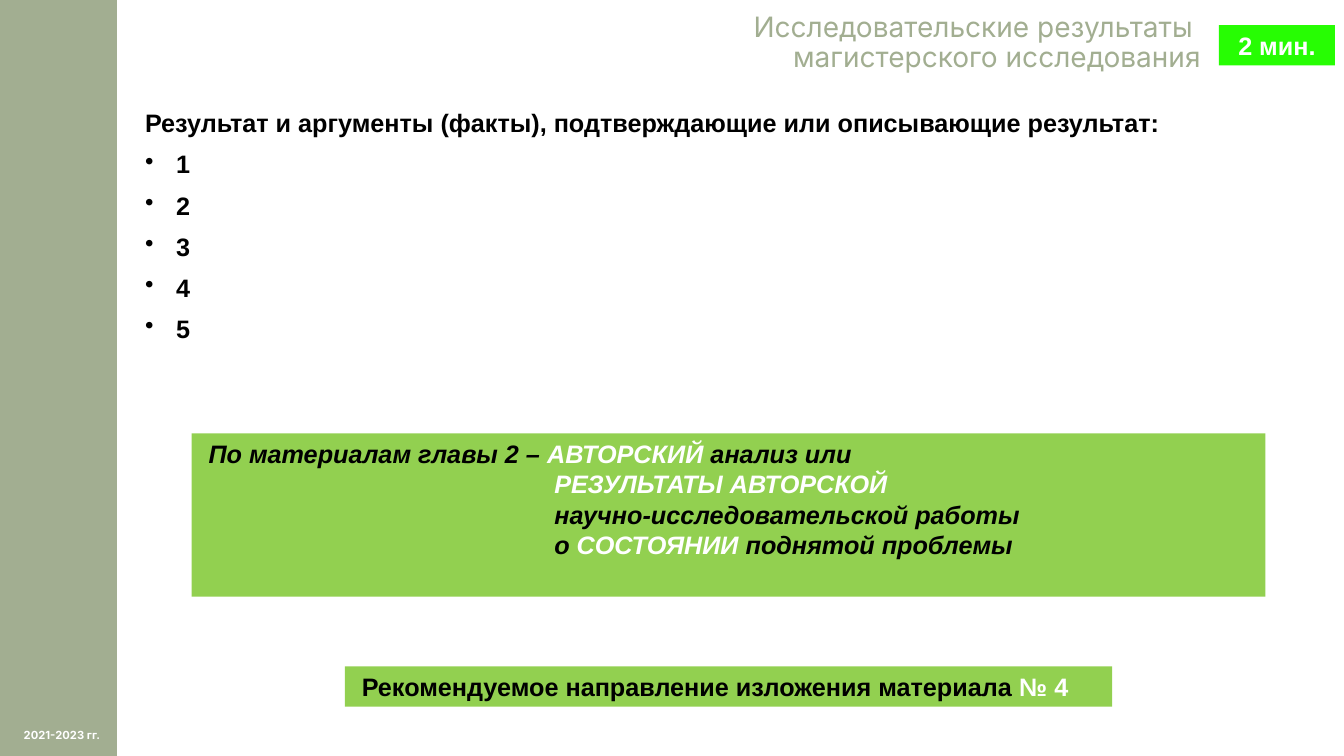
import pptx
import pptx.dml.color
import pptx.enum.shapes
import pptx.enum.text
import pptx.oxml.ns
import pptx.util
import lxml.etree

RGBColor = pptx.dml.color.RGBColor
SAGE = RGBColor(0xA2, 0xAE, 0x91)
GREEN = RGBColor(0x92, 0xD0, 0x50)
BRIGHT_GREEN = RGBColor(0x27, 0xFD, 0x03)
BLACK = RGBColor(0, 0, 0)
WHITE = RGBColor(255, 255, 255)
ALIGN = pptx.enum.text.PP_ALIGN
ANCHOR = pptx.enum.text.MSO_ANCHOR


class SlideBuilder:
    text_font = "Arial"
    accent_font = "Inter"
    text_size = 18
    line_spacing = 0.9
    bullet_indent = 0.31

    def __init__(self, presentation):
        self.width = presentation.slide_width
        self.height = presentation.slide_height
        self.slide = presentation.slides.add_slide(presentation.slide_layouts[6])

    def place(self, left, top, width, height):
        return (round(self.width * left / 100), round(self.height * top / 100),
                round(self.width * width / 100), round(self.height * height / 100))

    def rectangle(self, area, color):
        shape = self.slide.shapes.add_shape(
            pptx.enum.shapes.MSO_SHAPE.RECTANGLE, *self.place(*area))
        shape.shadow.inherit = False
        shape.fill.solid()
        shape.fill.fore_color.rgb = color
        shape.line.fill.background()
        return self.prepare(shape.text_frame)

    def text_box(self, area, anchor=ANCHOR.TOP):
        shape = self.slide.shapes.add_textbox(*self.place(*area))
        return self.prepare(shape.text_frame, anchor)

    def prepare(self, frame, anchor=ANCHOR.TOP):
        frame.word_wrap = True
        frame.vertical_anchor = anchor
        return frame

    def paragraph(self, frame, runs, align=ALIGN.LEFT, indent=0, bullet=False,
                  spacing=1.0, before=0, font=text_font, size=text_size,
                  bold=True, italic=False):
        first = not frame.paragraphs[0].runs
        paragraph = frame.paragraphs[0] if first else frame.add_paragraph()
        properties = paragraph._p.get_or_add_pPr()
        properties.set("marL", str(pptx.util.Inches(indent)))
        if bullet:
            properties.set("indent", str(-pptx.util.Inches(indent)))
            lxml.etree.SubElement(
                properties, pptx.oxml.ns.qn("a:buChar"), char="•")
        paragraph.alignment = align
        paragraph.line_spacing = spacing
        if not first:
            paragraph.space_before = pptx.util.Pt(before)
        for text, color in runs:
            run = paragraph.add_run()
            run.text = text
            run.font.name = font
            run.font.size = pptx.util.Pt(size)
            run.font.bold = bold
            run.font.italic = italic
            run.font.color.rgb = color

    def sidebar(self):
        self.rectangle((0, 0, 8.7, 100), SAGE)
        years = self.text_box((0.53, 94.53, 8.18, 5.47), ANCHOR.MIDDLE)
        self.paragraph(years, [("2021-2023 гг.", WHITE)], ALIGN.CENTER,
                       font=self.accent_font, size=8)

    def title(self, lines):
        frame = self.text_box((9.38, 1.73, 79.97, 9.33))
        frame.margin_left = frame.margin_right = 0
        frame.margin_top = frame.margin_bottom = 0
        for line in lines:
            self.paragraph(frame, [(line, SAGE)], ALIGN.RIGHT,
                           spacing=self.line_spacing, font=self.accent_font,
                           size=20, bold=False)

    def results(self, heading, items):
        frame = self.text_box((10.05, 14, 88.5, 76.8))
        self.paragraph(frame, [(heading, BLACK)], spacing=self.line_spacing)
        for item in items:
            self.paragraph(frame, [(item, BLACK)], indent=self.bullet_indent,
                           bullet=True, spacing=self.line_spacing, before=10)

    def chapter_note(self, lead, continuation):
        frame = self.rectangle((14.25, 57.33, 79.9, 21.6), GREEN)
        self.paragraph(frame, lead, indent=0.07, italic=True)
        for runs in continuation:
            self.paragraph(frame, runs, indent=3.5, italic=True)

    def label(self, area, color, runs, align=ALIGN.LEFT, indent=0):
        self.paragraph(self.rectangle(area, color), runs, align, indent)


def main():
    presentation = pptx.Presentation()
    presentation.slide_width = pptx.util.Inches(13.33)
    presentation.slide_height = pptx.util.Inches(7.5)
    builder = SlideBuilder(presentation)
    builder.sidebar()
    builder.results(
        "Результат и аргументы (факты), подтверждающие или описывающие результат:",
        [str(number) for number in range(1, 6)])
    builder.chapter_note(
        [("По материалам главы 2 – ", BLACK), ("АВТОРСКИЙ", WHITE),
         (" анализ или", BLACK)],
        [[("РЕЗУЛЬТАТЫ АВТОРСКОЙ", WHITE)],
         [("научно-исследовательской работы", BLACK)],
         [("о ", BLACK), ("СОСТОЯНИИ", WHITE), (" поднятой проблемы", BLACK)]])
    builder.label((90.7, 3.33, 8.63, 5.33), BRIGHT_GREEN,
                  [("2 мин.", WHITE)], ALIGN.CENTER)
    builder.label((25.66, 88.13, 57.09, 5.33), GREEN,
                  [("Рекомендуемое направление изложения материала ", BLACK),
                   ("№ 4", WHITE)], indent=0.07)
    builder.title(["Исследовательские результаты ", "магистерского исследования"])
    presentation.save("out.pptx")


if __name__ == "__main__":
    main()
